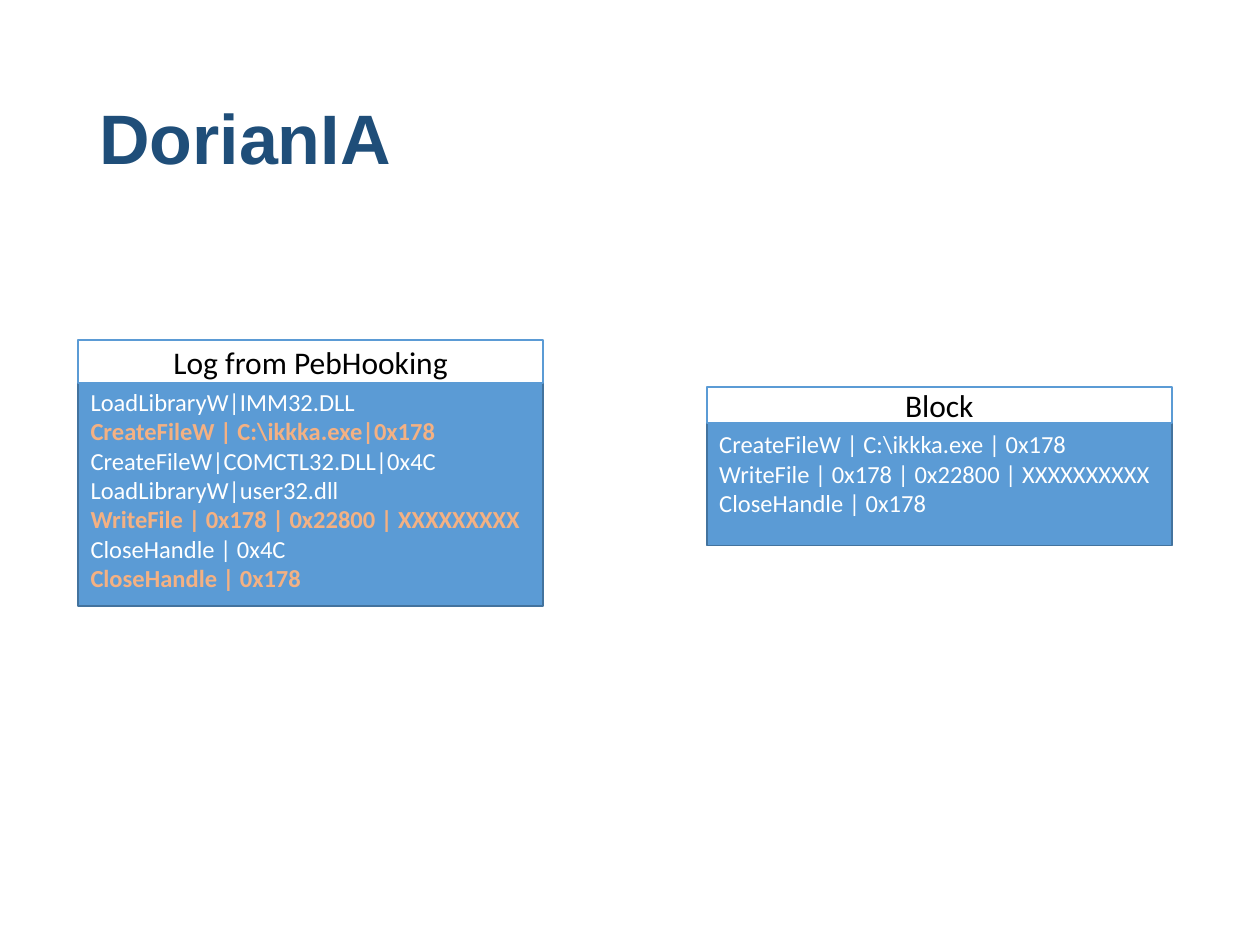
from pptx import Presentation, util as u
from pptx.dml.color import RGBColor
from pptx.enum import shapes, text

COLORS = {
    "title": "1F4E79",
    "blue": "5B9BD5",
    "edge": "43739E",
    "white": "FFFFFF",
    "black": "000000",
    "highlight": "F4B183",
}


def format_runs(p, font, size, color, bold=False):
    for r in p.runs:
        r.font.name = font
        r.font.size = u.Pt(size)
        r.font.bold = bold
        r.font.color.rgb = RGBColor.from_string(COLORS[color])


def add_box(group, left, top, height, fill, line):
    """Add a panel-wide rectangle and return its text frame."""
    sp = group.shapes.add_shape(
        shapes.MSO_SHAPE.RECTANGLE,
        u.Inches(left), u.Inches(top), u.Inches(3.69), u.Inches(height))
    sp.shadow.inherit = False
    sp.fill.solid()
    sp.fill.fore_color.rgb = RGBColor.from_string(COLORS[fill])
    sp.line.color.rgb = RGBColor.from_string(COLORS[line])
    sp.line.width = u.Pt(1)
    sp.text_frame.word_wrap = True
    return sp.text_frame


prs = Presentation()
prs.slide_width, prs.slide_height = u.Inches(10), u.Inches(7.5)
s = prs.slides.add_slide(prs.slide_layouts[6])

# Title
tf = s.shapes.add_textbox(
    u.Inches(0.69), u.Inches(0.4), u.Inches(8.62), u.Inches(1.45)).text_frame
tf.word_wrap = True
tf.vertical_anchor = text.MSO_ANCHOR.MIDDLE
p = tf.paragraphs[0]
p.text = "DorianIA"
p.line_spacing = 0.9
format_runs(p, "Arial", 40, "title", bold=True)

# Panels: heading, left, heading top and height, body top and height,
# then the log lines with whether each is highlighted
panels = [
    ("Log from PebHooking", 0.62, 2.7, 0.34, 3.02, 1.79, [
        ("LoadLibraryW|IMM32.DLL", False),
        ("CreateFileW | C:\\ikkka.exe|0x178", True),
        ("CreateFileW|COMCTL32.DLL|0x4C", False),
        ("LoadLibraryW|user32.dll", False),
        ("WriteFile | 0x178 | 0x22800 | XXXXXXXXX", True),
        ("CloseHandle | 0x4C", False),
        ("CloseHandle | 0x178", True),
    ]),
    ("Block", 5.61, 3.07, 0.29, 3.36, 0.97, [
        ("CreateFileW | C:\\ikkka.exe | 0x178", False),
        ("WriteFile | 0x178 | 0x22800 | XXXXXXXXXX", False),
        ("CloseHandle | 0x178", False),
    ]),
]

for heading, left, head_top, head_height, body_top, body_height, lines in panels:
    group = s.shapes.add_group_shape()

    tf = add_box(group, left, body_top, body_height, "blue", "edge")
    tf.vertical_anchor = text.MSO_ANCHOR.TOP
    tf.text = "\n".join(line for line, _ in lines)
    for p, (_, marked) in zip(tf.paragraphs, lines):
        p.alignment = text.PP_ALIGN.LEFT
        format_runs(p, "Calibri", 14, "highlight" if marked else "white", marked)

    tf = add_box(group, left, head_top, head_height, "white", "blue")
    tf.vertical_anchor = text.MSO_ANCHOR.MIDDLE
    p = tf.paragraphs[0]
    p.text = heading
    p.alignment = text.PP_ALIGN.CENTER
    format_runs(p, "Calibri", 18, "black")

prs.save("out.pptx")
